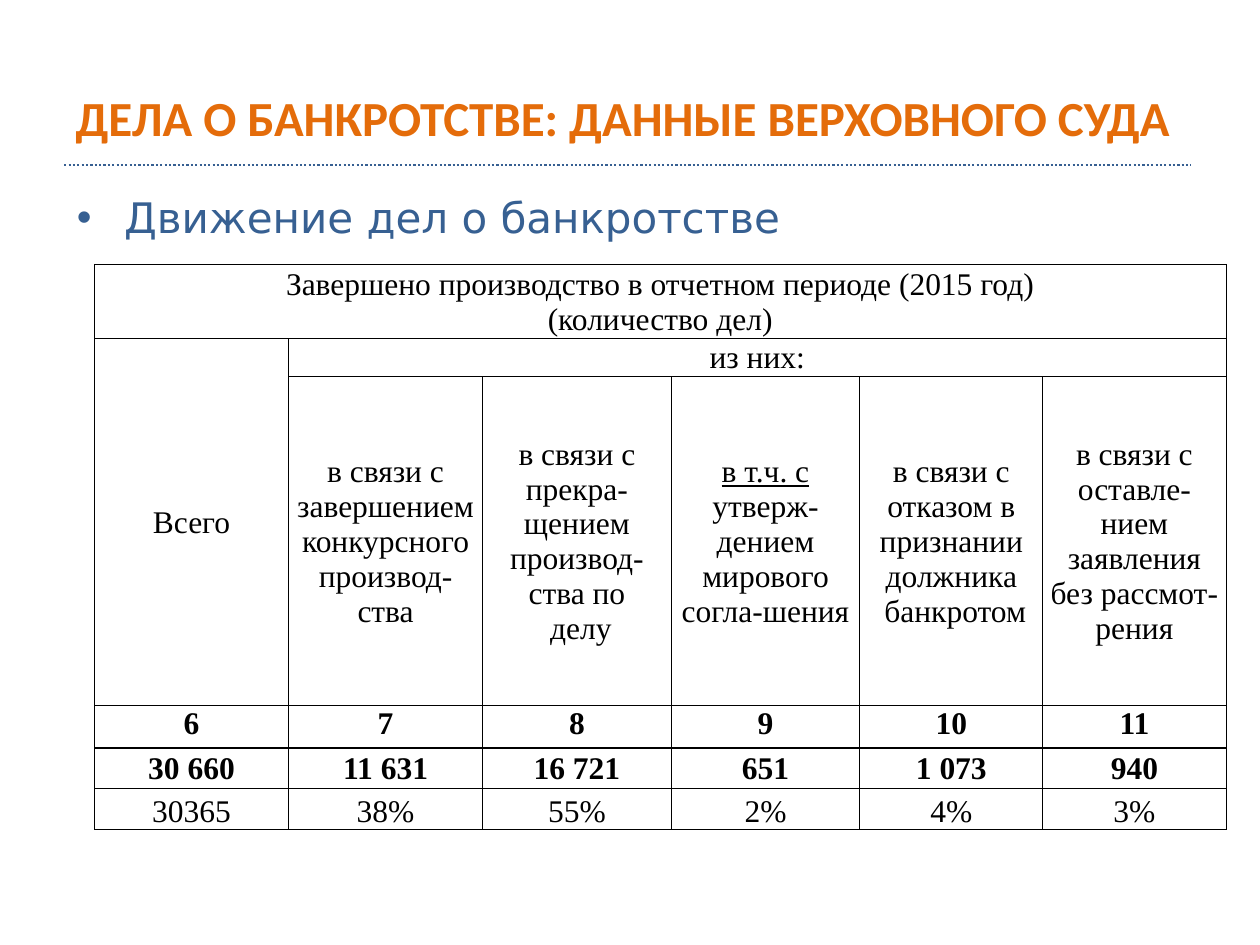
from lxml import etree
from pptx import Presentation
from pptx.dml.color import RGBColor
from pptx.enum.dml import MSO_LINE
from pptx.enum.shapes import MSO_CONNECTOR
from pptx.enum.text import MSO_ANCHOR, PP_ALIGN
from pptx.oxml.ns import qn
from pptx.util import Pt

LEFT, CENTER = PP_ALIGN.LEFT, PP_ALIGN.CENTER
MIDDLE, TOP, BOTTOM = MSO_ANCHOR.MIDDLE, MSO_ANCHOR.TOP, MSO_ANCHOR.BOTTOM
DOTTED = MSO_LINE.ROUND_DOT
STRAIGHT = MSO_CONNECTOR.STRAIGHT

ORANGE, BLUE, BLACK, WHITE = "E46C0A", "376092", "000000", "FFFFFF"

TITLE_FONT = {"name": "Calibri", "size": Pt(28), "bold": True}
BODY_FONT = {"name": "DejaVu Sans", "size": Pt(24), "bold": False}
TABLE_FONT = {"name": "Times New Roman", "size": Pt(18)}
CELL_MARGINS = {"margin_left": Pt(0.7), "margin_top": Pt(0.7),
                "margin_right": Pt(0.7), "margin_bottom": Pt(0)}

COLUMN_WIDTHS = [110.9, 110.9, 107.8, 107.8, 104.6, 104.6]
ROW_HEIGHTS = [42.4, 21.6, 188, 24.4, 23.2, 23.2]
HORIZONTAL_RULES = [1, 0.5, 0.5, 1, 1, 0.5, 0.5]
VERTICAL_RULE = 0.5
ROW_ANCHORS = [MIDDLE, MIDDLE, MIDDLE, TOP, MIDDLE, BOTTOM]
BOLD_ROWS = (3, 4)
MERGES = [((0, 0), (0, 5)), ((1, 0), (2, 0)), ((1, 1), (1, 5))]
UNDERLINED = "в т.ч. с"

ROWS = [
    ["Завершено производство в отчетном периоде (2015 год)\n(количество дел)"],
    ["Всего", "из них:"],
    ["",
     "в связи с завершением конкурсного производ-\nства",
     "в связи с прекра-\nщением производ-\nства по\n делу",
     UNDERLINED + " утверж-дением мирового согла-шения",
     "в связи с отказом в признании должника\n банкротом",
     "в связи с оставле-нием заявления без рассмот-рения"],
    ["6", "7", "8", "9", "10", "11"],
    ["30 660", "11 631", "16 721", "651", "1 073", "940"],
    ["30365", "38%", "55%", "2%", "4%", "3%"],
]


def color(hex_value):
    return RGBColor.from_string(hex_value)


def set_attributes(target, values):
    for name, value in values.items():
        setattr(target, name, value)


def format_runs(paragraph, font_values, hex_value):
    for run in paragraph.runs:
        set_attributes(run.font, font_values)
        run.font.color.rgb = color(hex_value)


def place(shape, left, top, width, height):
    set_attributes(shape, {"left": Pt(left), "top": Pt(top),
                           "width": Pt(width), "height": Pt(height)})


def fill_title(title, text):
    place(title, 36, 21.6, 648, 90)
    title.text_frame.vertical_anchor = MIDDLE
    paragraph = title.text_frame.paragraphs[0]
    paragraph.text = text
    paragraph.alignment = LEFT
    format_runs(paragraph, TITLE_FONT, ORANGE)


def fill_body(body, text):
    place(body, 36.7, 105.8, 669.6, 408.2)
    paragraph = body.text_frame.paragraphs[0]
    paragraph.text = text
    set_attributes(paragraph, {"space_before": Pt(6), "space_after": Pt(6)})
    properties = paragraph._p.get_or_add_pPr()
    properties.set("marL", str(Pt(27)))
    properties.set("indent", str(-Pt(27)))
    etree.SubElement(properties, qn("a:buChar"), char="•")
    format_runs(paragraph, BODY_FONT, BLUE)


def add_dotted_rule(slide, left, right, top):
    rule = slide.shapes.add_connector(STRAIGHT, Pt(left), Pt(top), Pt(right), Pt(top))
    rule.line.color.rgb = color(BLUE)
    set_attributes(rule.line, {"width": Pt(1.25), "dash_style": DOTTED})
    etree.SubElement(rule._element.spPr, qn("a:effectLst"))


def set_borders(cell, widths):
    """Draw black borders; widths maps L, R, T, B, in that order, to points."""
    properties = cell._tc.get_or_add_tcPr()
    for side, width in widths.items():
        line = etree.SubElement(properties, qn("a:ln" + side), w=str(Pt(width)))
        fill = etree.SubElement(line, qn("a:solidFill"))
        etree.SubElement(fill, qn("a:srgbClr"), val=BLACK)


def format_cell(cell, row):
    set_borders(cell, {"L": VERTICAL_RULE, "R": VERTICAL_RULE,
                       "T": HORIZONTAL_RULES[row],
                       "B": HORIZONTAL_RULES[row + cell.span_height]})
    set_attributes(cell, CELL_MARGINS)
    cell.vertical_anchor = ROW_ANCHORS[row]
    if row == len(ROWS) - 1:
        cell.fill.background()
    else:
        cell.fill.solid()
        cell.fill.fore_color.rgb = color(WHITE)


def write_cell(cell, text, bold):
    paragraph = cell.text_frame.paragraphs[0]
    paragraph.alignment = CENTER
    if text.startswith(UNDERLINED):
        for part in (UNDERLINED, text.removeprefix(UNDERLINED)):
            paragraph.add_run().text = part
        paragraph.runs[0].font.underline = True
    else:
        paragraph.text = text.replace("\n", "\v")
    format_runs(paragraph, {**TABLE_FONT, "bold": bold}, BLACK)


def add_cases_table(slide):
    table = slide.shapes.add_table(
        len(ROW_HEIGHTS), len(COLUMN_WIDTHS), Pt(54), Pt(151.2),
        Pt(sum(COLUMN_WIDTHS)), Pt(sum(ROW_HEIGHTS))).table
    set_attributes(table, {"first_row": False, "horz_banding": False})
    for column, width in zip(table.columns, COLUMN_WIDTHS):
        column.width = Pt(width)
    for row, height in zip(table.rows, ROW_HEIGHTS):
        row.height = Pt(height)
    for first, last in MERGES:
        table.cell(*first).merge(table.cell(*last))
    for row, texts in enumerate(ROWS):
        for column in range(len(COLUMN_WIDTHS)):
            format_cell(table.cell(row, column), row)
        for column, text in enumerate(texts):
            write_cell(table.cell(row, column), text, row in BOLD_ROWS)


def main():
    presentation = Presentation()
    set_attributes(presentation, {"slide_width": Pt(720), "slide_height": Pt(540)})
    slide = presentation.slides.add_slide(presentation.slide_layouts[1])
    fill_title(slide.shapes.title, "ДЕЛА О БАНКРОТСТВЕ: ДАННЫЕ ВЕРХОВНОГО СУДА")
    fill_body(slide.placeholders[1], "Движение дел о банкротстве")
    add_dotted_rule(slide, 36.7, 680.4, 94.3)
    add_cases_table(slide)
    presentation.save("out.pptx")


if __name__ == "__main__":
    main()
